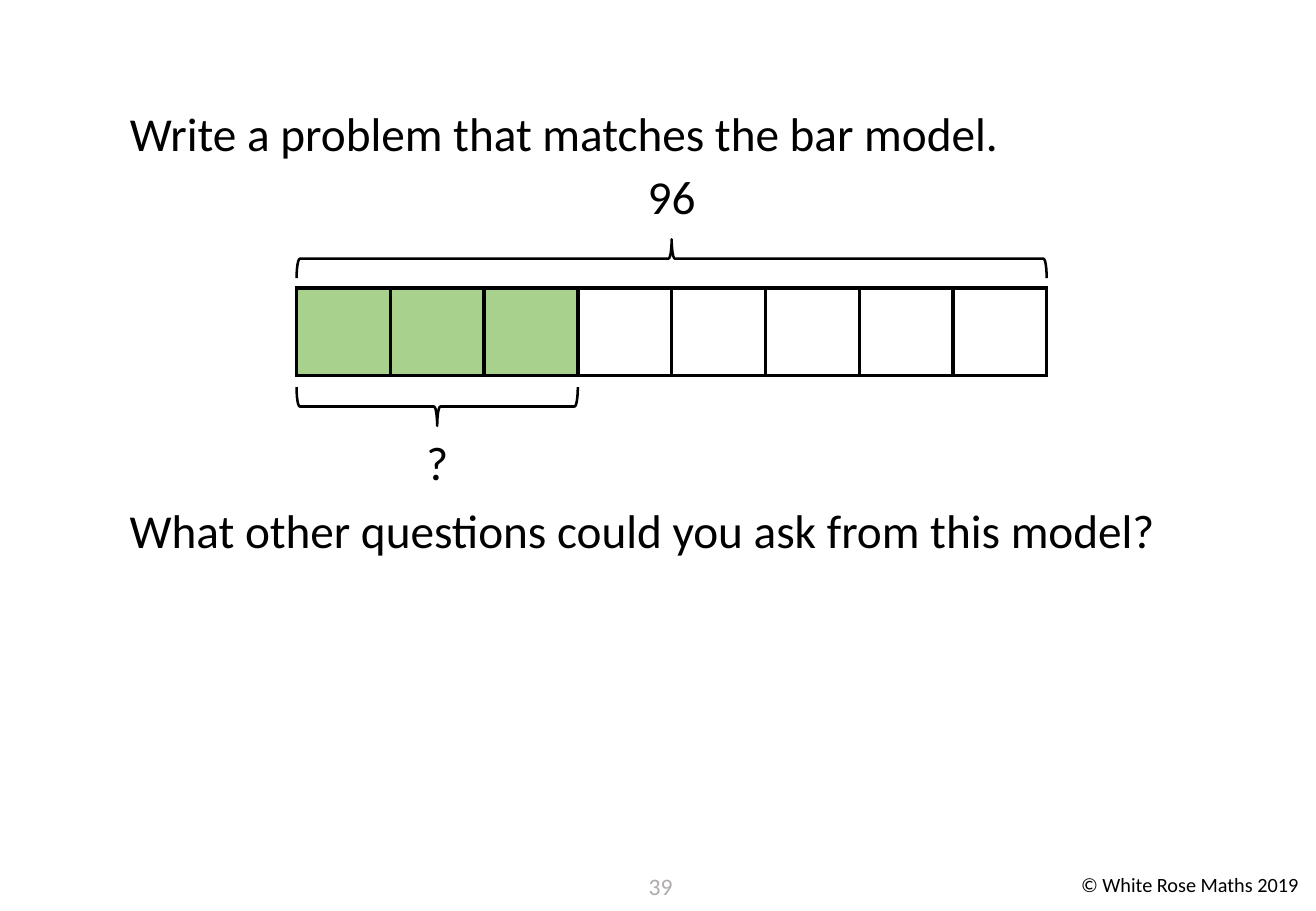
import lxml.etree
import pptx
import pptx.dml.color
import pptx.enum.shapes
import pptx.enum.text
import pptx.oxml.ns
import pptx.util

Cm = pptx.util.Cm
Pt = pptx.util.Pt
ALIGN = pptx.enum.text.PP_ALIGN
COLOURS = {"ink": "000000", "shaded": "A9D18E", "page_number": "AFABAB"}
FONT = "Calibri"

BAR_LEFT, BAR_TOP, BAR_HEIGHT = 6.2, 6.02, 1.83
CELL_WIDTH, CELL_COUNT, SHADED_COUNT = 1.96, 8, 3
BRACE_DEPTH = 0.81
PROMPT_LEFT, PROMPT_WIDTH, LINE_HEIGHT = 2.46, 22.38, 1.45
LABEL_WIDTH = 4.14


def colour(name):
    return pptx.dml.color.RGBColor.from_string(COLOURS[name])


class BarModelSlide:
    def __init__(self, presentation):
        self.slide = presentation.slides.add_slide(presentation.slide_layouts[5])

    def format_text(self, shape, text, size, ink, align):
        text_frame = shape.text_frame
        text_frame.text = text
        text_frame.word_wrap = True
        text_frame.auto_size = pptx.enum.text.MSO_AUTO_SIZE.NONE
        text_frame.vertical_anchor = pptx.enum.text.MSO_ANCHOR.TOP
        paragraph = text_frame.paragraphs[0]
        paragraph.alignment = align
        font = paragraph.runs[0].font
        font.name = FONT
        font.size = Pt(size)
        font.color.rgb = colour(ink)

    def title(self, text, left, top, width, height):
        shape = self.slide.shapes.title
        shape.left, shape.top = Cm(left), Cm(top)
        shape.width, shape.height = Cm(width), Cm(height)
        self.format_text(shape, text, 28, "ink", ALIGN.LEFT)

    def text(self, text, left, top, width, height, size=28, ink="ink", align=ALIGN.LEFT):
        shape = self.slide.shapes.add_textbox(Cm(left), Cm(top), Cm(width), Cm(height))
        self.format_text(shape, text, size, ink, align)

    def label(self, text, centre, top):
        self.text(text, centre - LABEL_WIDTH / 2, top, LABEL_WIDTH, LINE_HEIGHT, align=ALIGN.CENTER)

    def cell_borders(self, cell):
        properties = cell._tc.get_or_add_tcPr()
        qn = pptx.oxml.ns.qn
        for side in ("a:lnL", "a:lnR", "a:lnT", "a:lnB"):
            line = lxml.etree.SubElement(properties, qn(side), w=str(Pt(2.25)))
            fill = lxml.etree.SubElement(line, qn("a:solidFill"))
            lxml.etree.SubElement(fill, qn("a:srgbClr"), val=COLOURS["ink"])

    def bar(self):
        frame = self.slide.shapes.add_table(
            1, CELL_COUNT, Cm(BAR_LEFT), Cm(BAR_TOP), Cm(CELL_WIDTH * CELL_COUNT), Cm(BAR_HEIGHT)
        )
        table = frame.table
        table.first_row = False
        table.horz_banding = False
        for column in table.columns:
            column.width = Cm(CELL_WIDTH)
        for index, cell in enumerate(table.rows[0].cells):
            self.cell_borders(cell)
            if index < SHADED_COUNT:
                cell.fill.solid()
                cell.fill.fore_color.rgb = colour("shaded")
            else:
                cell.fill.background()

    def brace(self, cells, middle, rotation):
        length = CELL_WIDTH * cells
        centre = BAR_LEFT + length / 2
        shape = self.slide.shapes.add_shape(
            pptx.enum.shapes.MSO_SHAPE.LEFT_BRACE,
            Cm(centre - BRACE_DEPTH / 2),
            Cm(middle - length / 2),
            Cm(BRACE_DEPTH),
            Cm(length),
        )
        shape.rotation = rotation
        shape.shadow.inherit = False
        shape.fill.background()
        shape.line.color.rgb = colour("ink")
        shape.line.width = Pt(1.5)
        return centre


def main():
    presentation = pptx.Presentation()
    presentation.slide_width = Cm(27.51)
    presentation.slide_height = Cm(19.05)
    page = BarModelSlide(presentation)
    page.title(
        "Write a problem that matches the bar model.", PROMPT_LEFT, 2.06, PROMPT_WIDTH, LINE_HEIGHT
    )
    page.bar()
    whole_centre = page.brace(CELL_COUNT, 5.41, 90)
    part_centre = page.brace(SHADED_COUNT, 8.5, 270)
    page.label("96", whole_centre, 3.38)
    page.label("?", part_centre, 8.94)
    page.text(
        "What other questions could you ask from this model?",
        PROMPT_LEFT, 10.36, PROMPT_WIDTH, LINE_HEIGHT,
    )
    page.text("39", 13.16, 18.11, 1.3, 0.94, 14, "page_number", ALIGN.CENTER)
    page.text("© White Rose Maths 2019", 22.35, 18.11, 5.16, 0.76, 12)
    presentation.save("out.pptx")


if __name__ == "__main__":
    main()
